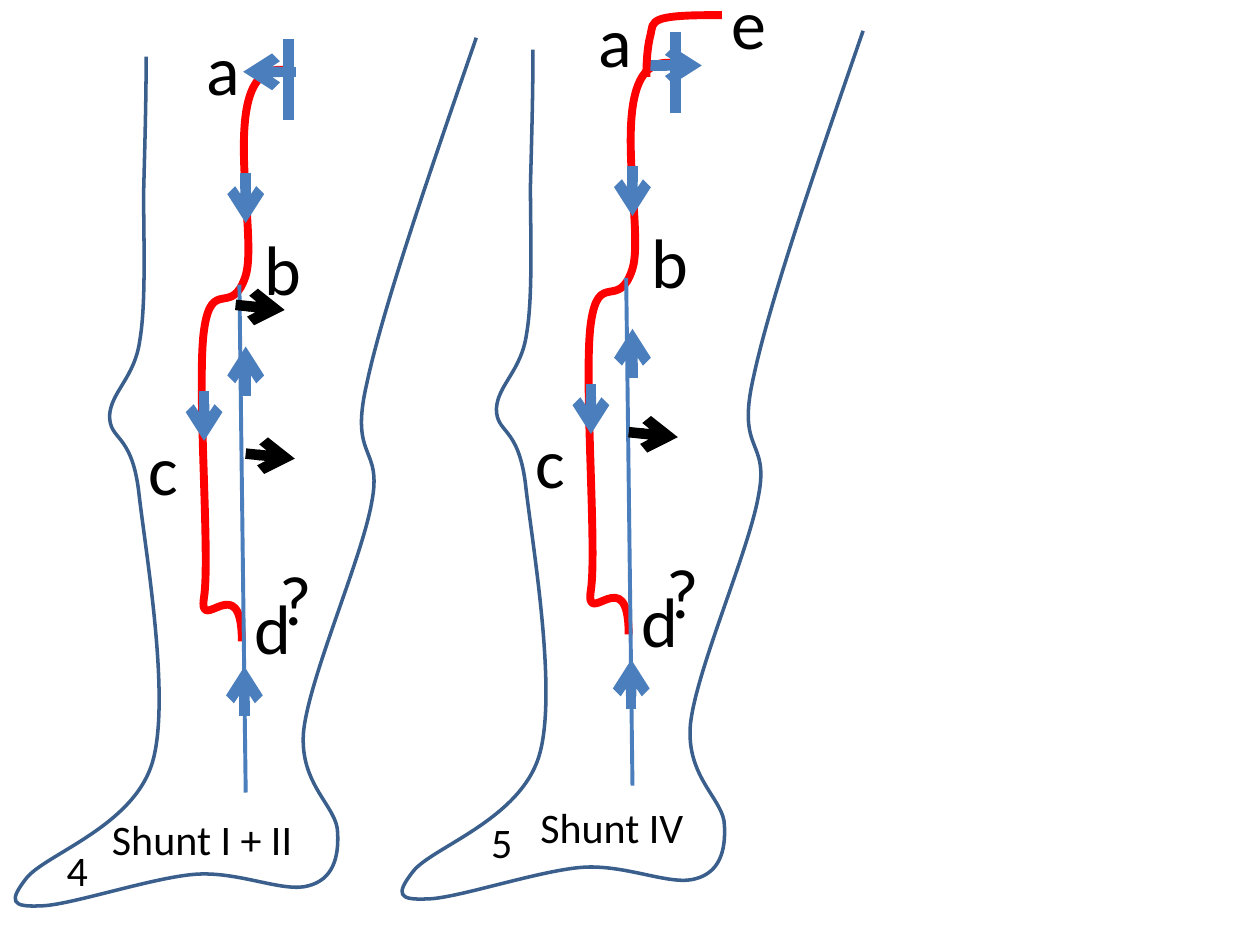
from lxml import etree
from pptx import Presentation
from pptx import util as u
from pptx.dml.color import RGBColor
from pptx.enum import shapes, text
from pptx.oxml import ns

COLORS = {"outline": "3A5F8C", "flow": "4B7EBC", "reflux": "FF0000", "ink": "000000"}
COLUMNS, ROWS = 100, 75
WIDTH, HEIGHT = u.Inches(10), u.Inches(7.5)
CURVE_STEPS = 20

LETTER = {"size": u.Pt(40), "name": "Calibri"}
CAPTION = {"size": u.Pt(24), "name": "Calibri"}
FRAME = {"word_wrap": True, "auto_size": text.MSO_AUTO_SIZE.SHAPE_TO_FIT_TEXT}
LETTER_BOX, NARROW_BOX, CAPTION_BOX = (5, 7.7), (2.8, 7.7), (17.5, 5)

LEG = [
    (10.4, 1.5), (10.4, 5), (10.3, 8.5), (10.2, 12.3),
    (10.2, 16), (10.4, 21.1), (9.9, 24), (9.5, 27), (7.6, 28.1), (7.5, 30),
    (7.5, 32), (9.2, 31.3), (9.8, 35.9), (10.3, 40.5), (12.4, 52.4), (10.9, 57.5),
    (9.4, 62.6), (2.4, 64.8), (0.9, 66.7), (-0.6, 68.6), (-0.2, 69), (2, 68.9),
    (4.2, 68.9), (10.7, 66.7), (14.2, 66.4), (17.7, 66.1), (21.3, 67.9), (23.3, 67.3),
    (25.2, 66.8), (25.7, 65.1), (25.6, 63.1), (25.6, 61), (22.5, 59.3), (22.9, 55),
    (23.4, 50.6), (27.5, 41.4), (28.3, 36.9), (29.2, 32.3), (26.5, 33.6), (27.9, 27.5),
    (29.2, 21.4), (32.9, 10.7), (36.6, 0),
]
VEIN = [
    (21.7, 2.6), (15.7, 1.5), (19.4, 15.4), (18.3, 18.9),
    (17.2, 22.3), (15.6, 18.9), (15, 23.2), (14.4, 27.4), (15.5, 41.2), (15, 44.4),
    (14.5, 47.6), (18, 41.9), (18, 47.9),
]
PELVIC_VEIN = [
    (25.4, -1.25), (23.5, -1.25), (21.6, -1.25), (20.6, -0.95),
    (19.7, -0.65), (19.9, -0.25), (19.7, 0.45), (19.5, 1.25), (19.4, 2.45), (19.4, 3.65),
]
COMMON_ARROWS = [
    ((18.3, 10.7), (18.3, 14.7)),
    ((18.2, 53.8), (18.2, 49.9)),
    ((15, 28), (15, 32)),
]
COMMON_LETTERS = [
    ("b", (18.8, 14.4), LETTER_BOX),
    ("c", (9.6, 30.3), NARROW_BOX),
    ("d", (18, 42.9), LETTER_BOX),
    ("?", (20, 40.6), LETTER_BOX),
]
LEGS = [
    {
        "box": (31.9, 2.45),
        "flow": [((18.3, 27.55), (18.3, 23.65)), ((19.7, 2.75), (23.8, 2.75))],
        "perforators": [((18, 31.85), (21.9, 32.25))],
        "branches": [PELVIC_VEIN],
        "letters": [("a", (14.6, -3.15), LETTER_BOX), ("e", (25.2, -4.55), LETTER_BOX)],
        "captions": [("Shunt IV", (10, 60.65), CAPTION_BOX), ("5", (6.1, 61.85), CAPTION_BOX)],
    },
    {
        "box": (1.2, 3),
        "flow": [((18.3, 28.4), (18.3, 24.5)), ((22.3, 2.7), (18.1, 2.7))],
        "perforators": [((18.3, 33), (22.2, 33.4)), ((17.5, 21.2), (21.4, 21.6))],
        "branches": [],
        "letters": [("a", (14.2, -1.5), LETTER_BOX)],
        "captions": [("Shunt I + II", (6.7, 61.1), CAPTION_BOX), ("4", (3.1, 63.5), CAPTION_BOX)],
    },
]


def place(box, point):
    """Turn a grid point inside a box into slide lengths."""
    return (
        round((box[0] + point[0]) * WIDTH / COLUMNS),
        round((box[1] + point[1]) * HEIGHT / ROWS),
    )


def bezier(start, first, second, end, t):
    """Return the point at share t of a cubic curve."""
    s = 1 - t
    return tuple(
        s**3 * a + 3 * s * s * t * b + 3 * s * t * t * c + t**3 * d
        for a, b, c, d in zip(start, first, second, end)
    )


def curve_corners(knots):
    """Return the top left and bottom right corners that chained curves fill."""
    points = [
        bezier(*knots[i:i + 4], step / CURVE_STEPS)
        for i in range(0, len(knots) - 1, 3)
        for step in range(CURVE_STEPS + 1)
    ]
    return [tuple(pick(axis) for axis in zip(*points)) for pick in (min, max)]


def style_line(shape, color, weight):
    """Give an outline its colour and width in points."""
    shape.line.color.rgb = RGBColor.from_string(COLORS[color])
    shape.line.width = u.Pt(weight)


def add_curve(slide, box, knots, color, weight):
    """Draw chained cubic curves as one open outline."""
    corner, far_corner = (place(box, point) for point in curve_corners(knots))
    builder = slide.shapes.build_freeform(*corner)
    builder.add_line_segments([far_corner], close=False)
    curve = builder.convert_to_shape()
    outline = curve._element.spPr.find(".//" + ns.qn("a:path"))
    for command in list(outline):
        outline.remove(command)
    groups = [("a:moveTo", knots[:1])]
    groups += [("a:cubicBezTo", knots[i:i + 3]) for i in range(1, len(knots), 3)]
    for tag, points in groups:
        command = etree.SubElement(outline, ns.qn(tag))
        for point in points:
            x, y = place(box, point)
            etree.SubElement(
                command, ns.qn("a:pt"), x=str(x - corner[0]), y=str(y - corner[1])
            )
    curve.shadow.inherit = False
    curve.fill.background()
    style_line(curve, color, weight)


def add_line(slide, box, ends, color, weight=6, arrow=True):
    """Draw a straight line, with an arrowhead if asked."""
    start, end = (place(box, point) for point in ends)
    line = slide.shapes.add_connector(shapes.MSO_CONNECTOR.STRAIGHT, *start, *end)
    style_line(line, color, weight)
    properties = line._element.spPr
    if arrow:
        etree.SubElement(properties.find(ns.qn("a:ln")), ns.qn("a:tailEnd"), type="arrow")
    etree.SubElement(properties, ns.qn("a:effectLst"))


def add_label(slide, box, label, font_format):
    """Write one label at its grid place."""
    words, corner, size = label
    text_box = slide.shapes.add_textbox(*place(box, corner), *place((0, 0), size))
    for name, value in FRAME.items():
        setattr(text_box.text_frame, name, value)
    run = text_box.text_frame.paragraphs[0].add_run()
    run.text = words
    for name, value in font_format.items():
        setattr(run.font, name, value)
    run.font.color.rgb = RGBColor.from_string(COLORS["ink"])


def add_leg(slide, leg):
    """Draw one leg with its veins, flow arrows and labels."""
    box = leg["box"]
    add_curve(slide, box, LEG, "outline", 2)
    add_curve(slide, box, VEIN, "reflux", 4.5)
    for ends in COMMON_ARROWS + leg["flow"]:
        add_line(slide, box, ends, "flow")
    add_line(slide, box, ((21.7, 0.1), (21.7, 6.5)), "flow", arrow=False)
    add_line(slide, box, ((17.8, 19.6), (18.3, 59.9)), "flow", 2.25, arrow=False)
    for branch in leg["branches"]:
        add_curve(slide, box, branch, "reflux", 4.5)
    for ends in leg["perforators"]:
        add_line(slide, box, ends, "ink")
    for label in COMMON_LETTERS + leg["letters"]:
        add_label(slide, box, label, LETTER)
    for label in leg["captions"]:
        add_label(slide, box, label, CAPTION)


def main():
    """Build the slide and save it."""
    presentation = Presentation()
    presentation.slide_width, presentation.slide_height = WIDTH, HEIGHT
    slide = presentation.slides.add_slide(presentation.slide_layouts[6])
    for leg in LEGS:
        add_leg(slide, leg)
    presentation.save("out.pptx")


if __name__ == "__main__":
    main()
